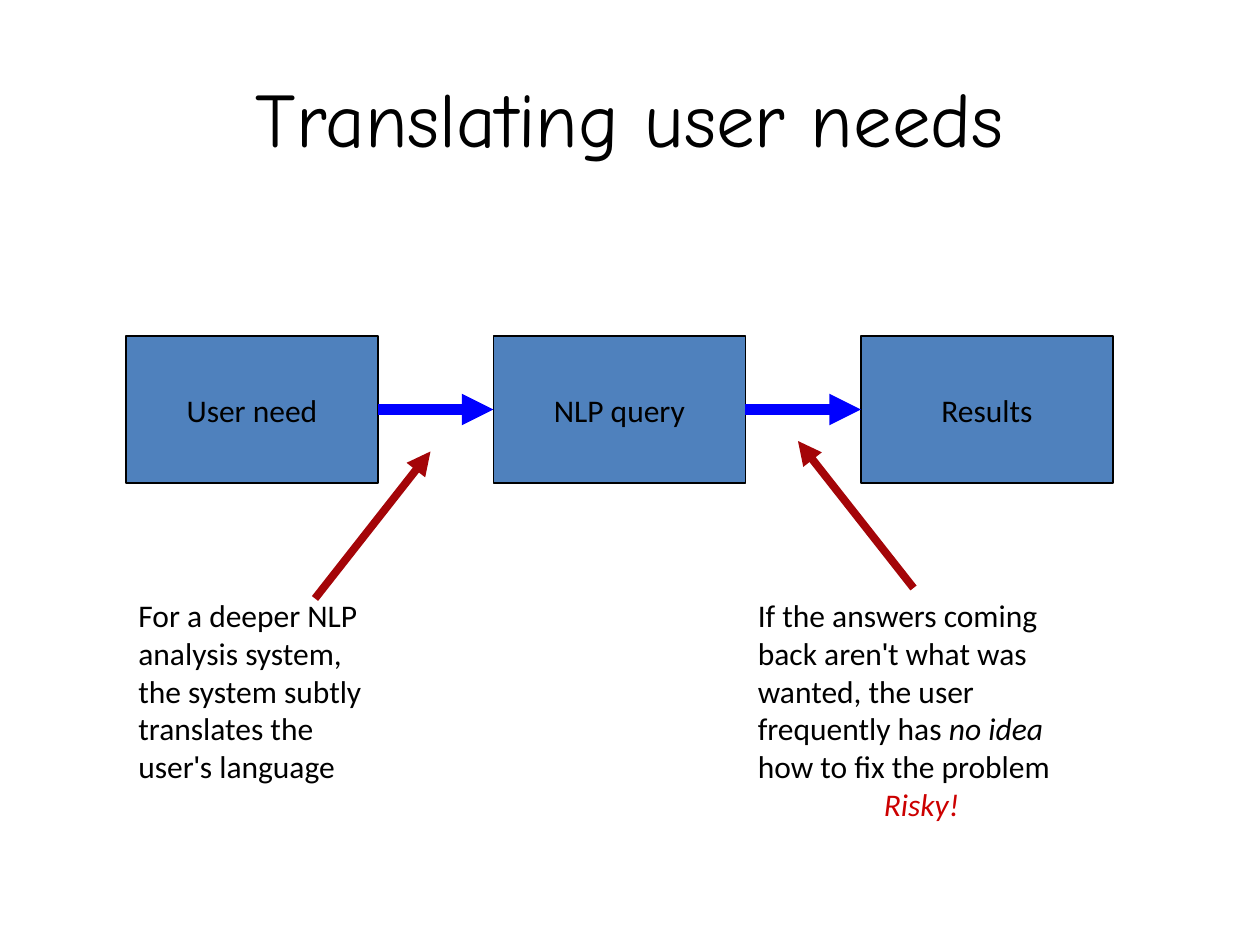
import pptx
import pptx.util
import pptx.dml.color
import pptx.enum.shapes
import pptx.enum.text
import pptx.oxml.ns
from lxml import etree

Pt = pptx.util.Pt
ALIGN = pptx.enum.text.PP_ALIGN
ANCHOR = pptx.enum.text.MSO_ANCHOR
COLORS = {"text": "000000", "box": "4F81BD", "flow": "0000FF",
          "note": "A40508", "risk": "CC0000"}


def rgb(name):
    return pptx.dml.color.RGBColor.from_string(COLORS[name])


def add_run(p, text, font="Calibri", size=18, color="text", italic=False):
    r = p.add_run()
    r.text = text
    r.font.name = font
    r.font.size = Pt(size)
    r.font.color.rgb = rgb(color)
    r.font.italic = italic


class SlideBuilder:
    def __init__(self, prs):
        self.s = prs.slides.add_slide(prs.slide_layouts[5])

    def title(self, text, x, y, w, h):
        sp = self.s.shapes.title
        sp.left, sp.top, sp.width, sp.height = Pt(x), Pt(y), Pt(w), Pt(h)
        tf = sp.text_frame
        tf.vertical_anchor = ANCHOR.MIDDLE
        p = tf.paragraphs[0]
        p.alignment = ALIGN.CENTER
        add_run(p, text, font="Comic Neue", size=44)

    def box(self, text, x, y, w, h):
        sp = self.s.shapes.add_shape(pptx.enum.shapes.MSO_SHAPE.RECTANGLE,
                                     Pt(x), Pt(y), Pt(w), Pt(h))
        sp.shadow.inherit = False
        sp.fill.solid()
        sp.fill.fore_color.rgb = rgb("box")
        sp.line.color.rgb = rgb("text")
        sp.line.width = Pt(0.75)
        tf = sp.text_frame
        tf.vertical_anchor = ANCHOR.MIDDLE
        p = tf.paragraphs[0]
        p.alignment = ALIGN.CENTER
        add_run(p, text)

    def arrow(self, x1, y1, x2, y2, color, width):
        c = self.s.shapes.add_connector(pptx.enum.shapes.MSO_CONNECTOR.STRAIGHT,
                                        Pt(x1), Pt(y1), Pt(x2), Pt(y2))
        c.line.color.rgb = rgb(color)
        c.line.width = Pt(width)
        qn = pptx.oxml.ns.qn
        etree.SubElement(c.line._get_or_add_ln(), qn("a:tailEnd"), type="triangle")
        etree.SubElement(c._element.spPr, qn("a:effectLst"))

    def note(self, lines, x, y, w, h):
        """Add one paragraph per line; a line is a list of (text, format) runs."""
        tf = self.s.shapes.add_textbox(Pt(x), Pt(y), Pt(w), Pt(h)).text_frame
        tf.word_wrap = True
        for i, runs in enumerate(lines):
            p = tf.paragraphs[0] if i == 0 else tf.add_paragraph()
            for text, style in runs:
                add_run(p, text, **style)
        return tf


def main():
    prs = pptx.Presentation()
    prs.slide_width, prs.slide_height = Pt(720), Pt(540)
    b = SlideBuilder(prs)
    b.title("Translating user needs", 36, 21.6, 648, 90)

    left, top, width, height, step = 72, 192, 144, 84, 210
    for i, text in enumerate(["User need", "NLP query", "Results"]):
        x = left + i * step
        b.box(text, x, top, width, height)
        if i:
            mid = top + height / 2
            b.arrow(x - step + width, mid, x, mid, "flow", 6)

    b.arrow(180, 342, 246, 258, "note", 4.5)
    b.arrow(522, 336, 456, 252, "note", 4.5)

    apostrophe = ("'", {"font": "Arial"})
    b.note([
        [("For a deeper NLP", {})],
        [("analysis system,", {})],
        [("the system subtly", {})],
        [("translates the", {})],
        [("user", {}), apostrophe, ("s language", {})],
    ], left, 337, 217, 153)
    tf = b.note([
        [("If the answers coming", {})],
        [("back aren", {}), apostrophe, ("t what was", {})],
        [("wanted, the user", {})],
        [("frequently has ", {}), ("no idea", {"italic": True})],
        [("how to fix the problem", {})],
        [("Risky!", {"color": "risk", "italic": True})],
    ], 426, 337, 274, 181)
    tf.paragraphs[-1]._p.get_or_add_pPr().set("marL", str(Pt(72)))

    prs.save("out.pptx")


if __name__ == "__main__":
    main()
